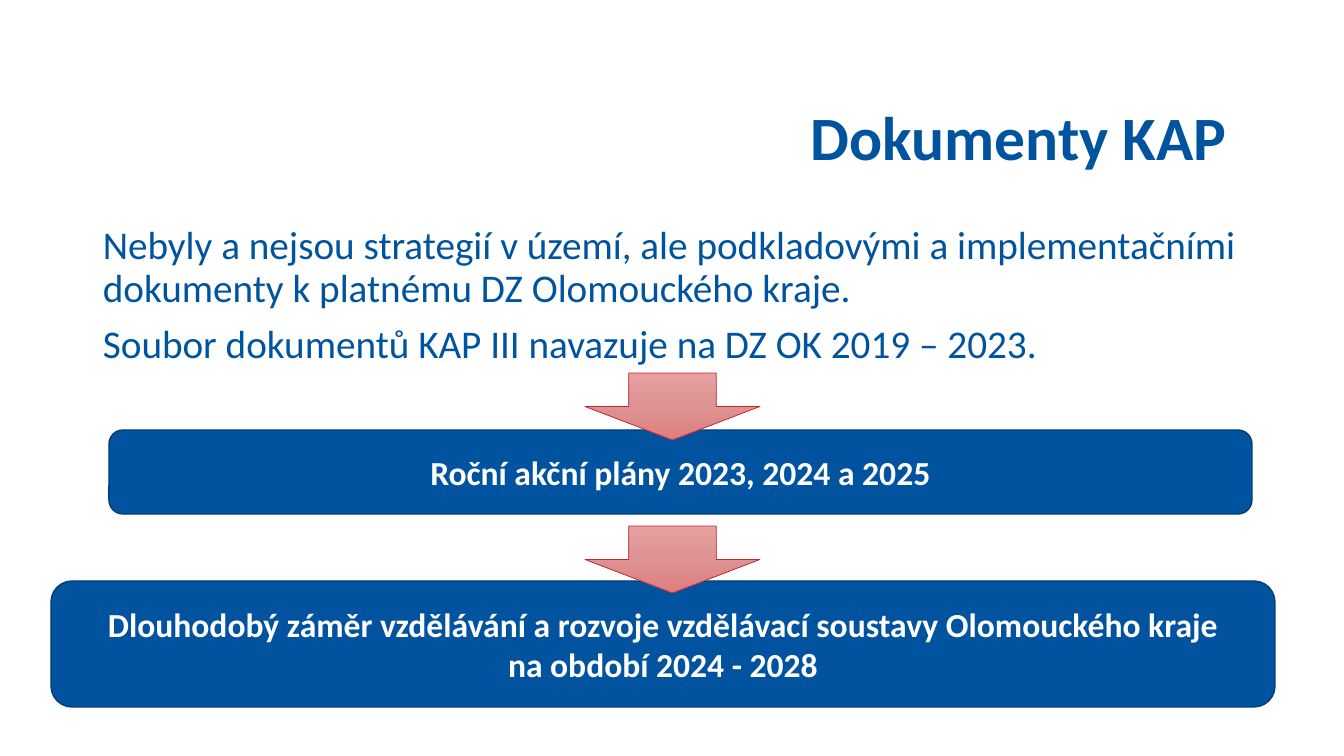
"""Builds the slide about the KAP documents."""
from copy import deepcopy

from pptx import Presentation
from pptx.dml.color import RGBColor
from pptx.enum.shapes import MSO_SHAPE
from pptx.enum.text import MSO_ANCHOR, PP_ALIGN
from pptx.oxml.ns import qn
from pptx.util import Emu, Pt

ROUNDED, ARROW = MSO_SHAPE.ROUNDED_RECTANGLE, MSO_SHAPE.DOWN_ARROW
TOP, MIDDLE = MSO_ANCHOR.TOP, MSO_ANCHOR.MIDDLE
LEFT, CENTER, RIGHT = PP_ALIGN.LEFT, PP_ALIGN.CENTER, PP_ALIGN.RIGHT

TITLE = "Dokumenty KAP"
BODY = [
    "Nebyly a nejsou strategií v území, ale podkladovými a implementačními "
    "dokumenty k platnému DZ Olomouckého kraje.",
    "Soubor dokumentů KAP III navazuje na DZ OK 2019 – 2023.",
]
STEPS = [
    ("Roční akční plány 2023, 2024 a 2025", (109, 430, 1143, 84)),
    ("Dlouhodobý záměr vzdělávání a rozvoje vzdělávací soustavy Olomouckého kraje\v"
     "na období 2024 - 2028", (51, 581, 1224, 126)),
]
ARROW_TOPS = [373, 526]
ARROW_LEFT, ARROW_WIDTH, ARROW_HEIGHT = 585, 175, 67
CONTENT_LEFT, CONTENT_WIDTH = 93, 1159
BLUE, BOX_BLUE, BOX_LINE, WHITE = "00549F", "02539F", "013D76", "FFFFFF"
ARROW_COLORS, ARROW_LINE = ["E79FA0", "DE9293", "DE7E7F"], "C4262D"


def px(length):
    return Emu(round(length * 914400 / 100.8))


def color(value):
    return RGBColor.from_string(value)


def place(shape, left, top, width, height):
    shape.left, shape.top = px(left), px(top)
    shape.width, shape.height = px(width), px(height)


def write(shape, texts, size, text_color, bold=False, align=LEFT,
          anchor=TOP, line_spacing=1.0, gap=0):
    frame = shape.text_frame
    frame.word_wrap = True
    frame.vertical_anchor = anchor
    for index, text in enumerate(texts):
        paragraph = frame.add_paragraph() if index else frame.paragraphs[0]
        paragraph.text = text
        paragraph.alignment = align
        paragraph.line_spacing = line_spacing
        paragraph.space_before = Pt(gap if index else 0)
        for run in paragraph.runs:
            run.font.name, run.font.size, run.font.bold = "Calibri", Pt(size), bold
            run.font.color.rgb = color(text_color)


def add_preset(slide, kind, box, line_color, line_width):
    shape = slide.shapes.add_shape(kind, *map(px, box))
    shape.shadow.inherit = False
    shape.line.color.rgb = color(line_color)
    shape.line.width = Pt(line_width)
    return shape


def fill_gradient(shape, colors):
    shape.fill.gradient()
    shape.fill.gradient_angle = 270
    stop_list = shape._element.spPr.find(qn("a:gradFill")).find(qn("a:gsLst"))
    stop_list.insert(1, deepcopy(stop_list[0]))
    for index, stop in enumerate(shape.fill.gradient_stops):
        stop.position = index / (len(colors) - 1)
        stop.color.rgb = color(colors[index])


def main():
    presentation = Presentation()
    presentation.slide_width, presentation.slide_height = px(1344), px(756)
    slide = presentation.slides.add_slide(presentation.slide_layouts[5])

    title = slide.shapes.title
    place(title, CONTENT_LEFT, 73, CONTENT_WIDTH, 135)
    write(title, [TITLE], 44, BLUE, bold=True, align=RIGHT, anchor=MIDDLE, line_spacing=0.9)
    title.text_frame.margin_right = px(25)

    body = slide.shapes.add_textbox(*map(px, (CONTENT_LEFT, 221, CONTENT_WIDTH, 456)))
    write(body, BODY, 28, BLUE, line_spacing=0.9, gap=10)

    for (text, box), arrow_top in zip(STEPS, ARROW_TOPS):
        step = add_preset(slide, ROUNDED, box, BOX_LINE, 1)
        step.fill.solid()
        step.fill.fore_color.rgb = color(BOX_BLUE)
        write(step, [text], 24, WHITE, bold=True, align=CENTER, anchor=MIDDLE)
        arrow_box = (ARROW_LEFT, arrow_top, ARROW_WIDTH, ARROW_HEIGHT)
        arrow = add_preset(slide, ARROW, arrow_box, ARROW_LINE, 0.5)
        fill_gradient(arrow, ARROW_COLORS)

    presentation.save("out.pptx")


if __name__ == "__main__":
    main()
